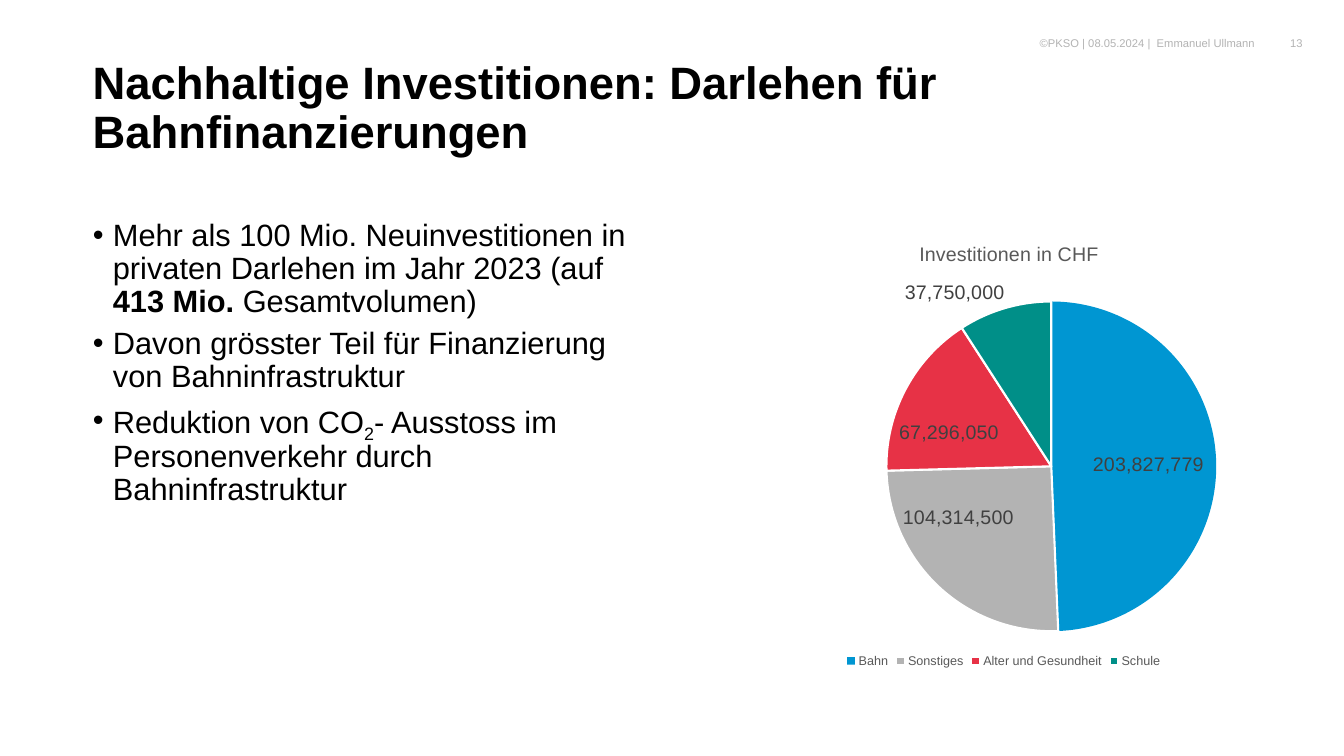
from typing import NamedTuple

from lxml.etree import SubElement
from pptx import Presentation
from pptx.chart.data import CategoryChartData
from pptx.dml.color import RGBColor
from pptx.enum.chart import XL_CHART_TYPE, XL_LABEL_POSITION, XL_LEGEND_POSITION
from pptx.enum.text import MSO_ANCHOR, PP_ALIGN
from pptx.oxml import parse_xml
from pptx.oxml.ns import nsdecls, qn
from pptx.util import Inches, Pt

BLACK = RGBColor(0x00, 0x00, 0x00)
WHITE = RGBColor(0xFF, 0xFF, 0xFF)
GREY = RGBColor(0xB3, 0xB3, 0xB3)
SLATE = RGBColor(0x59, 0x59, 0x59)
DARK = RGBColor(0x40, 0x40, 0x40)
BLUE = RGBColor(0x00, 0x96, 0xD2)
RED = RGBColor(0xE7, 0x32, 0x46)
TEAL = RGBColor(0x00, 0x8F, 0x88)
FONT = "Arial"


class Run(NamedTuple):
    text: str
    bold: bool = False
    sub: bool = False


class Slice(NamedTuple):
    name: str
    value: int
    color: RGBColor
    dx: float  # label shift from the slice centre, as a share of the chart
    dy: float


POINTS = [
    [Run("Mehr als 100 Mio. Neuinvestitionen in privaten Darlehen im Jahr 2023 (auf "),
     Run("413 Mio. ", bold=True), Run("Gesamtvolumen)")],
    [Run("Davon grösster Teil für Finanzierung von Bahninfrastruktur")],
    [Run("Reduktion von CO"), Run("2", sub=True),
     Run("- Ausstoss im Personenverkehr durch Bahninfrastruktur")],
]

SLICES = [
    Slice("Bahn", 203827779, BLUE, 0.02, 0),
    Slice("Sonstiges", 104314500, GREY, -0.05, -0.02),
    Slice("Alter und Gesundheit", 67296050, RED, -0.04, 0.01),
    Slice("Schule", 37750000, TEAL, -0.1, -0.21),
]


def add_text(slide, box: tuple, paras: list, *, size: float, color=BLACK, bold=False,
             align=PP_ALIGN.LEFT, anchor=MSO_ANCHOR.MIDDLE, space=1.0, before=0,
             bullet=False) -> None:
    frame = slide.shapes.add_textbox(*map(Inches, box)).text_frame
    frame.word_wrap = True
    frame.vertical_anchor = anchor
    frame.margin_left = frame.margin_right = frame.margin_top = frame.margin_bottom = 0
    for num, runs in enumerate(paras):
        para = frame.add_paragraph() if num else frame.paragraphs[0]
        if bullet:
            props = para._p.get_or_add_pPr()
            props.set("marL", str(Inches(0.2)))
            props.set("indent", str(Inches(-0.2)))
            SubElement(props, qn("a:buFont")).set("typeface", FONT)
            SubElement(props, qn("a:buChar")).set("char", "•")
        para.alignment = align
        para.line_spacing = space
        para.space_before = Pt(before if num else 0)
        for item in runs:
            run = para.add_run()
            run.text = item.text
            style(run.font, size, color, bold or item.bold)
            if item.sub:
                run.font._element.set("baseline", "-25000")


def style(font, size: float, color: RGBColor, bold: bool = False) -> None:
    font.name, font.size, font.bold = FONT, Pt(size), bold
    font.color.rgb = color


def set_place(node, index: int, inner: bool = False, **parts: float) -> None:
    """Give a chart part a manual layout, in shares of the chart."""
    old = node.find(qn("c:layout"))
    if old is not None:
        node.remove(old)
    tags = '<c:layoutTarget val="inner"/>' if inner else ""
    if "w" in parts or not node.tag.endswith("dLbl"):
        tags += '<c:xMode val="edge"/><c:yMode val="edge"/>'
    tags += "".join(f'<c:{key} val="{val}"/>' for key, val in parts.items())
    node.insert(index, parse_xml(
        f'<c:layout {nsdecls("c")}><c:manualLayout>{tags}</c:manualLayout></c:layout>'))


def add_pie(slide, box: tuple, slices: list[Slice]) -> None:
    data = CategoryChartData(number_format="#,##0")
    data.categories = [part.name for part in slices]
    data.add_series("Series 1", [part.value for part in slices])
    chart = slide.shapes.add_chart(XL_CHART_TYPE.PIE, *map(Inches, box), data).chart
    style(chart.font, 10, BLACK)

    # Chart title and legend
    chart.has_title = True
    title = chart.chart_title
    title.text_frame.text = "Investitionen in CHF"
    style(title.text_frame.paragraphs[0].runs[0].font, 14, SLATE)
    set_place(title._element, 1, x=0.38, y=0.04)
    chart.has_legend = True
    chart.legend.position = XL_LEGEND_POSITION.BOTTOM
    chart.legend.include_in_layout = False
    style(chart.legend.font, 9, SLATE)

    # Plot and value labels
    plot = chart.plots[0]
    plot.vary_by_categories = True
    set_place(plot._element.getparent(), 0, inner=True, x=0.34, y=0.18, w=0.45, h=0.73)
    series = plot.series[0]
    labels = series.data_labels
    labels.show_value = True
    labels.number_format = "#,##0"
    labels.number_format_is_linked = False
    labels.position = XL_LABEL_POSITION.CENTER
    style(labels.font, 14, DARK)
    for lead in labels._element.findall(qn("c:showLeaderLines")):
        lead.set("val", "0")

    # Slices
    for num, part in enumerate(slices):
        point = series.points[num]
        point.format.fill.solid()
        point.format.fill.fore_color.rgb = part.color
        if num:
            point.format.line.color.rgb = WHITE
            point.format.line.width = Pt(1.5)
        else:
            point.format.line.fill.background()
        label = point.data_label
        style(label.font, 14, DARK)
        label.position = XL_LABEL_POSITION.CENTER
        node = labels._element.findall(qn("c:dLbl"))[num]
        set_place(node, 1, x=part.dx, y=part.dy)


def main() -> None:
    deck = Presentation()
    deck.slide_width, deck.slide_height = Inches(13.33), Inches(7.5)
    slide = deck.slides.add_slide(deck.slide_layouts[6])

    # Title and header line
    add_text(slide, (0.92, 0.69, 11.54, 0.79),
             [[Run("Nachhaltige Investitionen: Darlehen für Bahnfinanzierungen")]],
             size=32.4, bold=True, space=0.9)
    add_text(slide, (0.92, 0.27, 11.53, 0.31),
             [[Run("©PKSO | 08.05.2024 |  Emmanuel Ullmann")]],
             size=8, color=GREY, align=PP_ALIGN.RIGHT)
    add_text(slide, (12.61, 0.27, 0.31, 0.31), [[Run("13")]],
             size=8, color=GREY, align=PP_ALIGN.RIGHT)

    # Bullets and chart
    add_text(slide, (0.92, 2.18, 5.51, 4.45), POINTS, size=22, space=0.9, before=6,
             anchor=MSO_ANCHOR.TOP, bullet=True)
    add_pie(slide, (6.32, 2.18, 7.27, 4.49), SLICES)
    deck.save("out.pptx")


if __name__ == "__main__":
    main()
